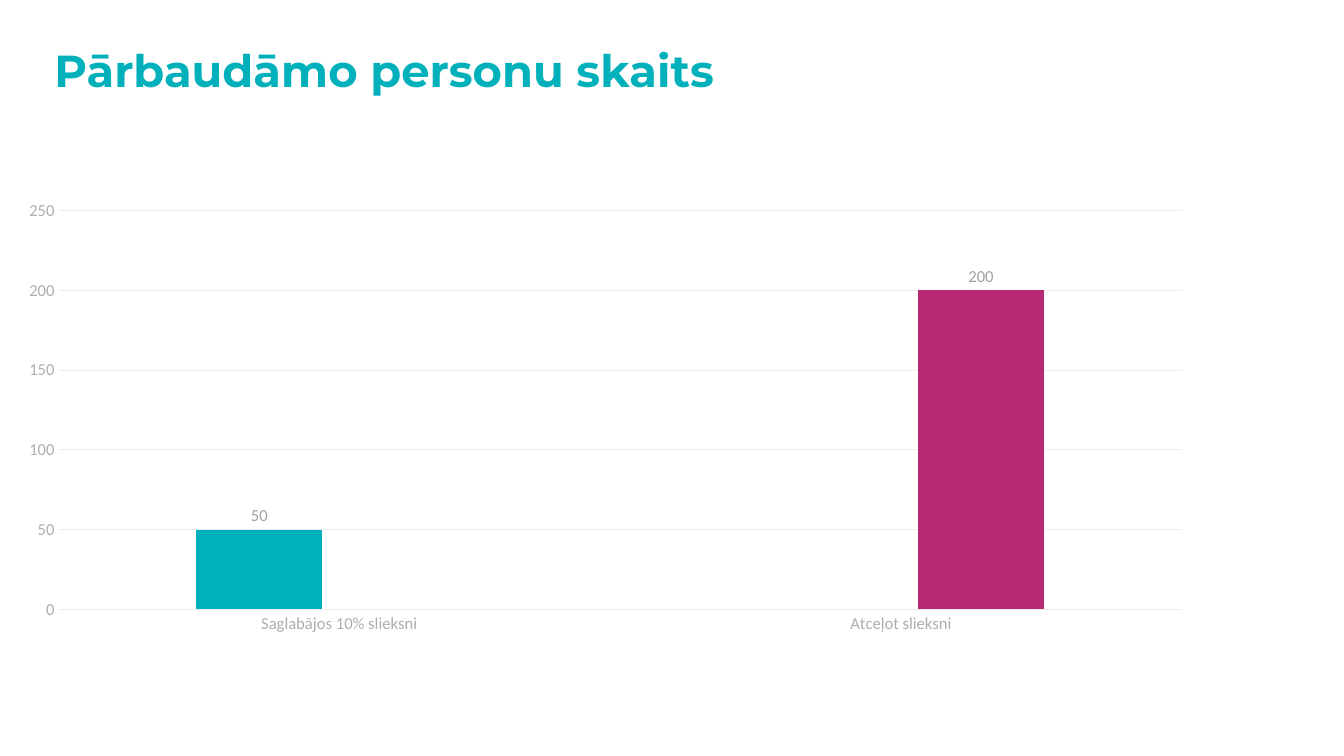
from lxml import etree
from pptx import Presentation
from pptx.chart.data import CategoryChartData
from pptx.dml.color import RGBColor
from pptx.enum.chart import XL_CHART_TYPE, XL_LABEL_POSITION, XL_TICK_MARK
from pptx.enum.text import MSO_ANCHOR, PP_ALIGN
from pptx.oxml.ns import qn
from pptx.util import Inches, Pt

COLUMNS = XL_CHART_TYPE.COLUMN_CLUSTERED
OUTSIDE_END = XL_LABEL_POSITION.OUTSIDE_END
NO_TICK = XL_TICK_MARK.NONE
TOP = MSO_ANCHOR.TOP
LEFT = PP_ALIGN.LEFT

TEAL = RGBColor(0x00, 0xB0, 0xBA)
MAGENTA = RGBColor(0xB7, 0x29, 0x73)
AXIS_GREY = RGBColor(0xAE, 0xAE, 0xB0)
LABEL_GREY = RGBColor(0xA2, 0xA2, 0xA4)
GRID_GREY = RGBColor(0xEC, 0xEC, 0xED)

CATEGORIES = ["Saglabājos 10% slieksni", "Atceļot slieksni"]
SERIES = [("Series 1", (50, None), TEAL), ("Series 2", (None, 200), MAGENTA)]
PLOT_AREA = {"x": 0.014, "y": 0.032, "w": 0.974, "h": 0.798}


class SlideBuilder:
    """Holds the fonts and the current slide, and adds styled elements to it."""

    title_font = "Montserrat"
    chart_font = "Calibri"

    def __init__(self, page):
        self.page = page

    def style_font(self, font, name, size, color, bold=False):
        font.name = name
        font.size = Pt(size)
        font.bold = bold
        font.color.rgb = color

    def style_line(self, line, color):
        line.color.rgb = color
        line.width = Pt(0.75)

    def title(self, text, left, top, width, height):
        box = self.page.shapes.title
        box.left, box.top = Inches(left), Inches(top)
        box.width, box.height = Inches(width), Inches(height)
        frame = box.text_frame
        frame.text = text
        frame.word_wrap = True
        frame.vertical_anchor = TOP
        para = frame.paragraphs[0]
        para.alignment = LEFT
        para.line_spacing = 1.0
        self.style_font(para.runs[0].font, self.title_font, 32, TEAL, bold=True)

    def column_chart(self, categories, series_rows, left, top, width, height):
        data = CategoryChartData()
        data.categories = categories
        for name, values, _ in series_rows:
            data.add_series(name, values)
        chart = self.page.shapes.add_chart(
            COLUMNS, Inches(left), Inches(top), Inches(width), Inches(height), data
        ).chart
        chart.has_title = False
        chart.has_legend = False
        self.style_font(chart.font, self.chart_font, 12, AXIS_GREY)
        self.style_axes(chart.category_axis, chart.value_axis)
        plot = chart.plots[0]
        plot.gap_width = 219
        plot.overlap = -27
        plot.vary_by_categories = False
        for series, (_, _, color) in zip(plot.series, series_rows):
            self.style_series(series, color)
        self.place_plot(chart)

    def style_axes(self, category_axis, value_axis):
        for axis in (category_axis, value_axis):
            axis.major_tick_mark = NO_TICK
            axis.minor_tick_mark = NO_TICK
            self.style_font(axis.tick_labels.font, self.chart_font, 12, AXIS_GREY)
        self.style_line(category_axis.format.line, GRID_GREY)
        value_axis.format.line.fill.background()
        value_axis.minimum_scale = 0
        value_axis.maximum_scale = 250
        value_axis.major_unit = 50
        self.style_line(value_axis.major_gridlines.format.line, GRID_GREY)

    def style_series(self, series, color):
        series.format.fill.solid()
        series.format.fill.fore_color.rgb = color
        series.invert_if_negative = False
        labels = series.data_labels
        labels.show_value = True
        labels.position = OUTSIDE_END
        self.style_font(labels.font, self.chart_font, 12, LABEL_GREY)

    def place_plot(self, chart):
        plot_area = chart.plots[0]._element.getparent()
        for old_layout in plot_area.findall(qn("c:layout")):
            plot_area.remove(old_layout)
        layout = etree.Element(qn("c:layout"))
        plot_area.insert(0, layout)
        manual = etree.SubElement(layout, qn("c:manualLayout"))
        settings = [("layoutTarget", "inner"), ("xMode", "edge"), ("yMode", "edge")]
        for tag, value in settings + list(PLOT_AREA.items()):
            etree.SubElement(manual, qn(f"c:{tag}")).set("val", str(value))


def main():
    deck = Presentation()
    deck.slide_width, deck.slide_height = Inches(13.33), Inches(7.5)
    builder = SlideBuilder(deck.slides.add_slide(deck.slide_layouts[5]))
    builder.title("Pārbaudāmo personu skaits", 0.44, 0.37, 6.95, 1.21)
    builder.column_chart(CATEGORIES, SERIES, 0.29, 1.93, 11.57, 4.96)
    deck.save("out.pptx")


if __name__ == "__main__":
    main()
